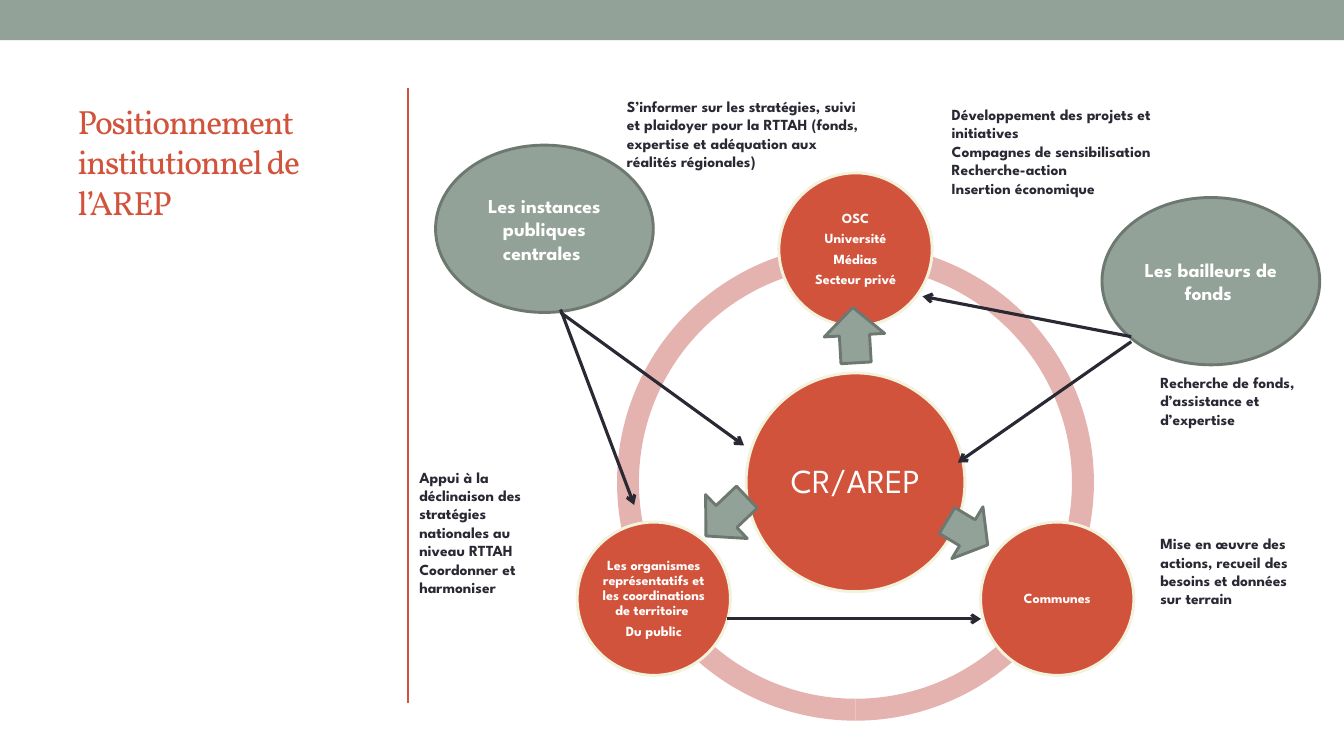
from dataclasses import dataclass
from math import cos, radians, sin

from lxml.etree import SubElement
from pptx import Presentation
from pptx.dml.color import RGBColor
from pptx.enum.shapes import MSO_CONNECTOR, MSO_SHAPE
from pptx.enum.text import MSO_ANCHOR, PP_ALIGN
from pptx.oxml.ns import qn
from pptx.util import Inches, Pt


@dataclass(frozen=True)
class Theme:
    red: str = "D2533C"
    sage: str = "93A299"
    sage_edge: str = "6D7871"
    ring: str = "E5B3AF"
    cream: str = "F3F2DC"
    ink: str = "292934"
    white: str = "FFFFFF"
    heading_font: str = "Vollkorn"
    body_font: str = "League Spartan"
    large: float = 24
    actor: float = 14
    note: float = 11
    node: float = 10
    edge: float = 2.08
    link: float = 2.25


THEME = Theme()


@dataclass(frozen=True)
class Box:
    left: float
    top: float
    width: float
    height: float

    def inner(self, left, top, width, height):
        return Box(self.left + left, self.top + top, width, height)

    def around(self, dx, dy, width, height):
        """Box centred at an offset from the centre of this one."""
        return self.inner(self.width / 2 + dx - width / 2,
                          self.height / 2 + dy - height / 2, width, height)

    def lengths(self):
        return [Inches(v) for v in (self.left, self.top, self.width, self.height)]


def rgb(code):
    return RGBColor.from_string(code)


def apply(target, values):
    for name, value in values.items():
        setattr(target, name, value)


def write(frame, paragraphs, size, color, font=THEME.body_font, bold=True,
          frame_format=None, paragraph_format=None):
    apply(frame, {"word_wrap": True, **(frame_format or {})})
    for index, words in enumerate(paragraphs):
        paragraph = frame.add_paragraph() if index else frame.paragraphs[0]
        apply(paragraph, paragraph_format or {})
        run = paragraph.add_run()
        run.text = words
        apply(run.font, {"name": font, "size": Pt(size), "bold": bold})
        run.font.color.rgb = rgb(color)


def add_figure(slide, preset, box, fill, edge=None):
    figure = slide.shapes.add_shape(preset, *box.lengths())
    figure.shadow.inherit = False
    figure.fill.solid()
    figure.fill.fore_color.rgb = rgb(fill)
    if edge:
        figure.line.color.rgb = rgb(edge)
        figure.line.width = Pt(THEME.edge)
    else:
        figure.line.fill.background()
    return figure


def add_line(slide, start, end, color, width, arrow=False):
    line = slide.shapes.add_connector(
        MSO_CONNECTOR.STRAIGHT, *[Inches(v) for v in (*start, *end)])
    line.line.color.rgb = rgb(color)
    line.line.width = Pt(width)
    properties = line._element.spPr
    if arrow:
        SubElement(properties.find(qn("a:ln")), qn("a:tailEnd"), type="arrow")
    SubElement(properties, qn("a:effectLst"))


def add_circle(slide, box, paragraphs, size, bold=True):
    circle = add_figure(slide, MSO_SHAPE.OVAL, box, THEME.red, THEME.cream)
    margins = dict.fromkeys(
        ("margin_left", "margin_top", "margin_right", "margin_bottom"), Inches(0.02))
    write(circle.text_frame, paragraphs, size, THEME.white, bold=bold,
          frame_format={"vertical_anchor": MSO_ANCHOR.MIDDLE, **margins},
          paragraph_format={"alignment": PP_ALIGN.CENTER, "line_spacing": 0.9,
                            "space_after": Pt(0.35 * size)})


def build_heading(slide, box):
    title = slide.shapes.title
    apply(title, dict(zip(("left", "top", "width", "height"), box.lengths())))
    write(title.text_frame, ["Positionnement institutionnel de l’AREP"],
          THEME.large, THEME.red, THEME.heading_font, bold=False,
          frame_format={"vertical_anchor": MSO_ANCHOR.BOTTOM},
          paragraph_format={"alignment": PP_ALIGN.LEFT})
    title.text_frame.paragraphs[0].runs[0]._r.get_or_add_rPr().set("spc", "-100")


def build_frame(slide, box):
    # Top band and vertical rule
    add_figure(slide, MSO_SHAPE.RECTANGLE, box.inner(0, 0, box.width, 0.4), THEME.sage)
    rule_x = box.left + 4.05
    add_line(slide, (rule_x, box.top + 0.87), (rule_x, box.top + 6.97), THEME.red, 1.5)


def build_wheel(slide, box):
    # Ring
    for start, end in ((90, 162), (18, 90), (162, 18)):
        arc = add_figure(slide, MSO_SHAPE.BLOCK_ARC, box, THEME.ring)
        for index, value in enumerate((start * 0.6, end * 0.6, 0.046)):
            arc.adjustments[index] = value

    # Hub and the nodes around it
    add_circle(slide, box.around(0, 0, 2.17, 2.17), ["CR/AREP"], THEME.large, bold=False)
    nodes = (
        ["OSC", "Université", "Médias", "Secteur privé"],
        ["Communes"],
        ["Les organismes représentatifs et les coordinations de territoire ", "Du public"],
    )
    orbit = 2.31
    for index, paragraphs in enumerate(nodes):
        angle = radians(-90 + index * 360 / len(nodes))
        add_circle(slide, box.around(orbit * cos(angle), orbit * sin(angle), 1.52, 1.52),
                   paragraphs, THEME.node)


def build_hub_arrows(slide, box):
    arrows = (
        (MSO_SHAPE.DOWN_ARROW, -1.28, 0.34, 0.56, 46.5),
        (MSO_SHAPE.DOWN_ARROW, 1.11, 0.5, 0.47, 301),
        (MSO_SHAPE.UP_ARROW, -0.01, -1.46, 0.55, 356.6),
    )
    for preset, dx, dy, height, rotation in arrows:
        arrow = add_figure(slide, preset, box.around(dx, dy, 0.6, height),
                           THEME.sage, THEME.sage_edge)
        arrow.rotation = rotation


def build_actors(slide, box):
    actors = (
        (0.26, 0.57, "Les instances publiques centrales "),
        (6.87, 1.09, "Les bailleurs de fonds "),
    )
    for left, top, name in actors:
        actor = add_figure(slide, MSO_SHAPE.FLOWCHART_CONNECTOR,
                           box.inner(left, top, 2.16, 1.66), THEME.sage, THEME.sage_edge)
        write(actor.text_frame, [name], THEME.actor, THEME.white,
              frame_format={"vertical_anchor": MSO_ANCHOR.MIDDLE},
              paragraph_format={"alignment": PP_ALIGN.CENTER})


def build_links(slide, box):
    links = (
        ((1.5, 2.23), (3.32, 3.55)),
        ((3.15, 5.27), (5.67, 5.27)),
        ((7.16, 2.52), (5.44, 3.72)),
        ((7.16, 2.47), (5.09, 2.07)),
        ((1.5, 2.2), (2.23, 4.14)),
    )
    for ends in links:
        start, end = [(box.left + x, box.top + y) for x, y in ends]
        add_line(slide, start, end, THEME.ink, THEME.link, arrow=True)


def build_notes(slide, box):
    notes = (
        ((7.35, 4.38, 1.68, 0.84),
         ["Mise en œuvre des actions, recueil des besoins et données sur terrain"]),
        ((0, 3.72, 1.51, 1.4),
         ["Appui à la déclinaison des stratégies nationales au niveau RTTAH",
          "Coordonner et harmoniser"]),
        ((7.35, 2.78, 1.68, 0.66), ["Recherche de fonds, d’assistance et d’expertise"]),
        ((2.06, 0.04, 2.56, 0.84),
         ["S’informer sur les stratégies, suivi et plaidoyer pour la RTTAH "
          "(fonds, expertise et adéquation aux réalités régionales)"]),
        ((5.28, 0.12, 2.45, 1.03),
         ["Développement des projets et initiatives", "Compagnes de sensibilisation",
          "Recherche-action", "Insertion économique"]),
    )
    for place, paragraphs in notes:
        note = slide.shapes.add_textbox(*box.inner(*place).lengths())
        write(note.text_frame, paragraphs, THEME.note, THEME.ink)


def main():
    deck = Presentation()
    apply(deck, {"slide_width": Inches(13.33), "slide_height": Inches(7.5)})
    slide = deck.slides.add_slide(deck.slide_layouts[5])
    wheel = Box(6.12, 2.42, 4.73, 4.73)
    diagram = Box(4.06, 0.87, 9.03, 6.28)

    build_frame(slide, Box(0, 0, 13.33, 7.5))
    build_heading(slide, Box(0.67, 0.87, 3.12, 1.38))
    build_wheel(slide, wheel)
    build_actors(slide, diagram)
    build_links(slide, diagram)
    build_hub_arrows(slide, wheel)
    build_notes(slide, diagram)
    deck.save("out.pptx")


if __name__ == "__main__":
    main()
